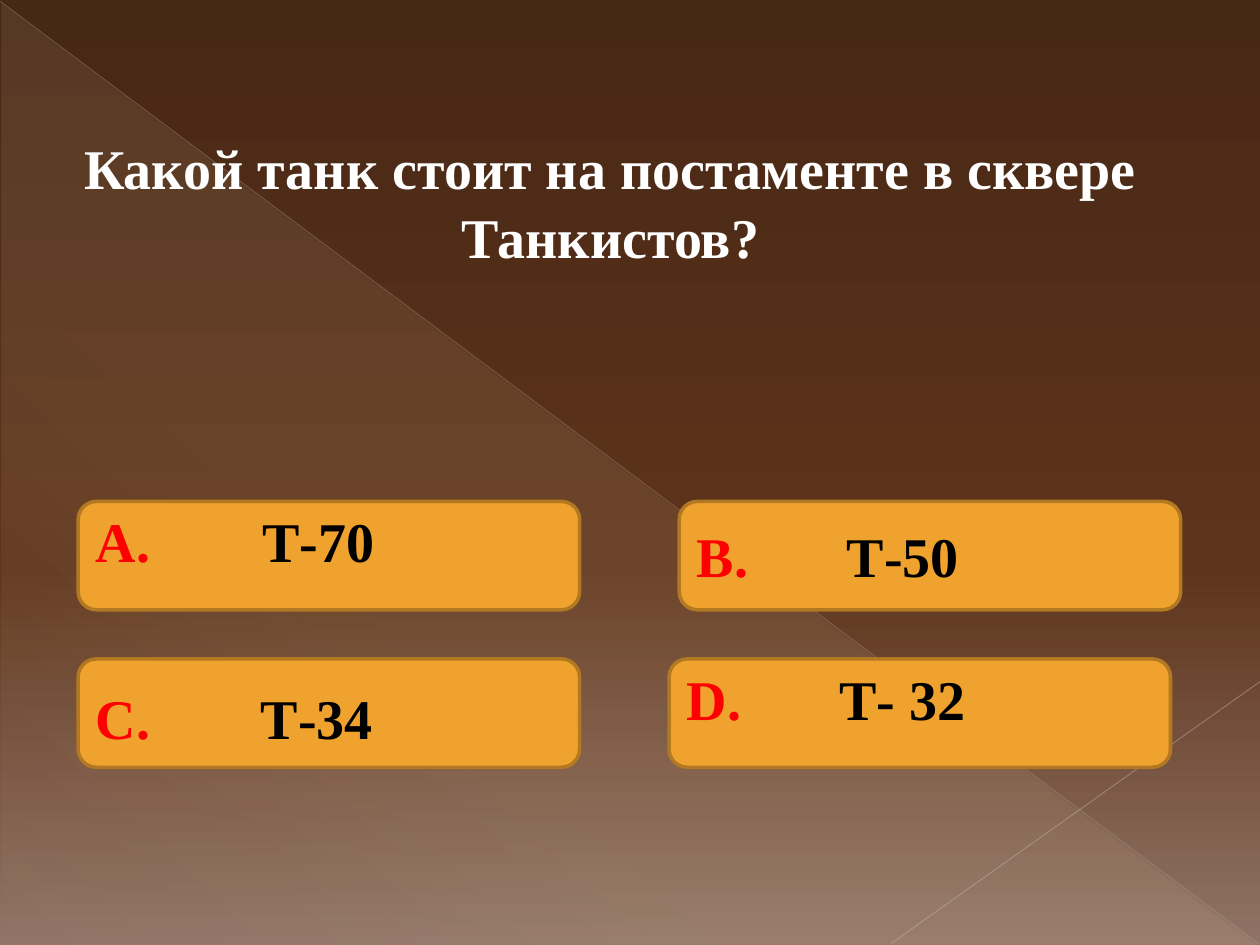
from pptx import Presentation
from pptx.dml.color import RGBColor
from pptx.enum.shapes import MSO_CONNECTOR, MSO_SHAPE
from pptx.enum.text import MSO_ANCHOR, PP_ALIGN
from pptx.oxml.ns import qn
from pptx.util import Inches, Pt
from lxml import etree

LINE = MSO_CONNECTOR.STRAIGHT
WEDGE = MSO_SHAPE.RIGHT_TRIANGLE
BOX = MSO_SHAPE.FLOWCHART_ALTERNATE_PROCESS
MIDDLE, LEFT, CENTER = MSO_ANCHOR.MIDDLE, PP_ALIGN.LEFT, PP_ALIGN.CENTER

COLORS = {
    "top": "472715", "mid": "5E341B", "low": "907365", "glow": "FBEEC9",
    "ray": "BCB7B4", "ray2": "C4BFBD", "box": "F0A22E", "edge": "B27822",
    "mark": "FF0000", "word": "000000", "title": "FFFFFF",
}
FORMAT = {"name": "Times New Roman", "size": Pt(32), "bold": True}


def add_stops(grad, stops, angle):
    """Fill a gradient with (position, colour, opacity) stops, in percent."""
    for child in list(grad):
        grad.remove(child)
    group = etree.SubElement(grad, qn("a:gsLst"))
    for pos, key, alpha in stops:
        stop = etree.SubElement(group, qn("a:gs"), pos=str(pos * 1000))
        color = etree.SubElement(stop, qn("a:srgbClr"), val=COLORS[key])
        if alpha < 100:
            etree.SubElement(color, qn("a:alpha"), val=str(alpha * 1000))
    etree.SubElement(grad, qn("a:lin"), ang=str(angle * 60000), scaled="0")


def add_run(para, text, key):
    run = para.add_run()
    run.text = text
    for name, value in FORMAT.items():
        setattr(run.font, name, value)
    run.font.color.rgb = RGBColor.from_string(COLORS[key])


prs = Presentation()
prs.slide_width, prs.slide_height = Inches(10), Inches(7.5)
slide = prs.slides.add_slide(prs.slide_layouts[5])
shapes = slide.shapes

# Background
slide.background.fill.gradient()
add_stops(slide.background._cSld.find(".//" + qn("a:gradFill")),
          [(0, "top", 100), (60, "mid", 100), (100, "low", 100)], 90)

# Light wedge
wedge = shapes.add_shape(WEDGE, Inches(0.01), Inches(0.02), Inches(9.98), Inches(7.48))
wedge.shadow.inherit = False
wedge.line.fill.background()
wedge.fill.gradient()
add_stops(wedge._element.spPr.find(qn("a:gradFill")),
          [(0, "glow", 10), (70, "glow", 8), (100, "glow", 1)], 133)

# Thin rays
for ends, key, width, alpha in [
    ((0, 0.01, 9.99, 7.49), "ray", 0.39, 35),
    ((10, 5.41, 7.07, 7.49), "ray2", 0.47, 45),
]:
    ray = shapes.add_connector(LINE, *[Inches(v) for v in ends])
    ray.line.width = Pt(width)
    ray.line.color.rgb = RGBColor.from_string(COLORS[key])
    props = ray._element.spPr
    color = props.find(".//" + qn("a:srgbClr"))
    etree.SubElement(color, qn("a:alpha"), val=str(alpha * 1000))
    etree.SubElement(props, qn("a:effectLst"))

# Answers: left, top, mark, word, tab stop, top and bottom margins
for left, top, mark, word, tab, above, below in [
    (0.62, 3.98, "А.", "Т-70", 1.32, 0, 0.24),
    (0.62, 5.23, "С.", "Т-34", 1.31, 0.06, 0),
    (5.39, 3.98, "В.", "Т-50", 1.19, 0, 0),
    (5.31, 5.23, "D.", "Т- 32", 1.21, 0, 0.24),
]:
    box = shapes.add_shape(BOX, Inches(left), Inches(top), Inches(3.98), Inches(0.86))
    box.shadow.inherit = False
    box.fill.solid()
    box.fill.fore_color.rgb = RGBColor.from_string(COLORS["box"])
    box.line.color.rgb = RGBColor.from_string(COLORS["edge"])
    box.line.width = Pt(2)
    frame = box.text_frame
    frame.word_wrap = True
    frame.vertical_anchor = MIDDLE
    frame.margin_top, frame.margin_bottom = Inches(above), Inches(below)
    para = frame.paragraphs[0]
    para.alignment = LEFT
    tabs = etree.SubElement(para._p.get_or_add_pPr(), qn("a:tabLst"))
    etree.SubElement(tabs, qn("a:tab"), pos=str(Inches(tab)), algn="l")
    add_run(para, mark + "\t", "mark")
    add_run(para, word, "word")

# Question, in front of the wedge
title = shapes.title
title.left, title.top = Inches(0.47), Inches(0.96)
title.width, title.height = Inches(8.75), Inches(1.48)
frame = title.text_frame
frame.word_wrap = True
frame.vertical_anchor = MIDDLE
frame.margin_bottom = Inches(0.27)
para = frame.paragraphs[0]
para.alignment = CENTER
para.line_spacing = 1.04
add_run(para, "Какой танк стоит на постаменте в сквере Танкистов?", "title")
shapes._spTree.append(title._element)

prs.save("out.pptx")
